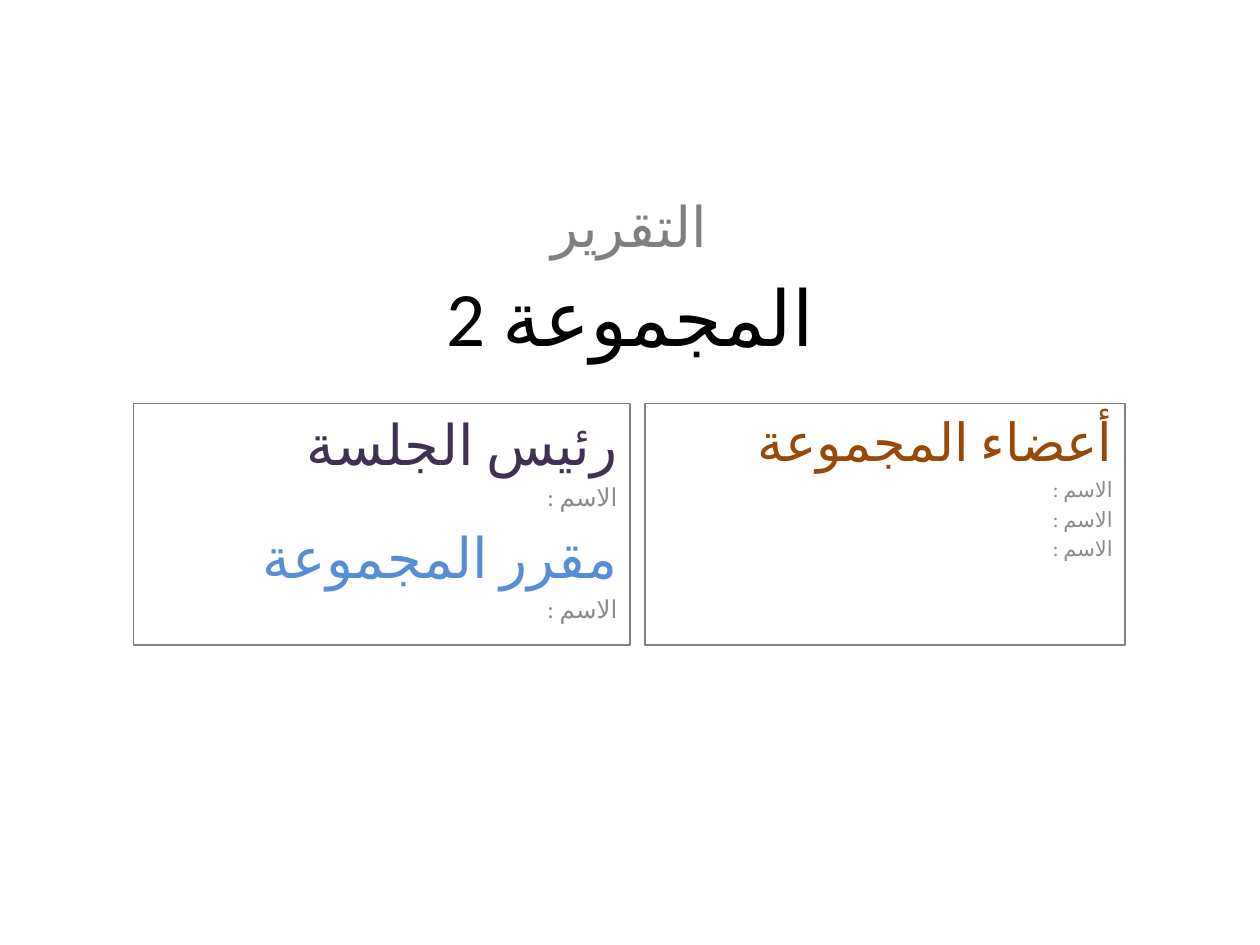
from lxml.etree import SubElement
from pptx import Presentation
from pptx.dml.color import RGBColor
from pptx.enum.shapes import MSO_SHAPE
from pptx.enum.text import MSO_ANCHOR, PP_ALIGN
from pptx.oxml.ns import qn
from pptx.util import Inches, Pt


def color(code):
    return RGBColor.from_string(code)


def write(shape, lines, align, rtl=True, anchor=MSO_ANCHOR.TOP):
    frame = shape.text_frame
    frame.word_wrap = True
    frame.vertical_anchor = anchor
    for i, (text, size, code) in enumerate(lines):
        para = frame.paragraphs[0] if i == 0 else frame.add_paragraph()
        para.alignment = align
        if rtl:
            para._p.get_or_add_pPr().set("rtl", "1")
        if i:
            para.space_before = Pt(size * 0.2)
        run = para.add_run()
        run.text = text
        for key, value in {"name": "Calibri", "size": Pt(size)}.items():
            setattr(run.font, key, value)
        run.font.color.rgb = color(code)
        # Arabic language and complex-script typeface
        props = run._r.get_or_add_rPr()
        props.set("lang", "ar-SA")
        SubElement(props, qn("a:cs")).set("typeface", "Calibri")


deck = Presentation()
deck.slide_width, deck.slide_height = Inches(10), Inches(7.5)
slide = deck.slides.add_slide(deck.slide_layouts[6])
shapes = slide.shapes

# Shared grid: left edge and full width of the content
left, wide = Inches(1.06), Inches(7.87)
top, high = Inches(3.2), Inches(1.92)
first, gap = Inches(3.94), Inches(0.12)

# Title
title = shapes.add_textbox(Inches(0.75), Inches(1.86), Inches(8.5), Inches(1.29))
write(title, [("المجموعة 2", 44, "000000")], PP_ALIGN.CENTER,
      anchor=MSO_ANCHOR.MIDDLE)

# Framed panels: chair and rapporteur, then members
name = "الاسم :"
gray = "8C8C8C"
panels = [
    (left, first, [("رئيس الجلسة", 32, "403152"), (name, 14, gray),
                   ("مقرر المجموعة", 32, "558ED5"), (name, 14, gray)]),
    (left + first + gap, wide - first - gap,
     [("أعضاء المجموعة", 30, "984807")] + [(name, 12, gray)] * 3),
]
for x, width, lines in panels:
    box = shapes.add_shape(MSO_SHAPE.RECTANGLE, x, top, width, high)
    box.shadow.inherit = False
    box.fill.background()
    box.line.color.rgb = color("808080")
    box.line.width = Pt(0.75)
    write(box, lines, PP_ALIGN.RIGHT)

# Heading above the title
head = shapes.add_textbox(left, Inches(1.47), wide, Inches(0.87))
write(head, [("التقرير", 32, "808080")], PP_ALIGN.CENTER, rtl=False)

deck.save("out.pptx")
